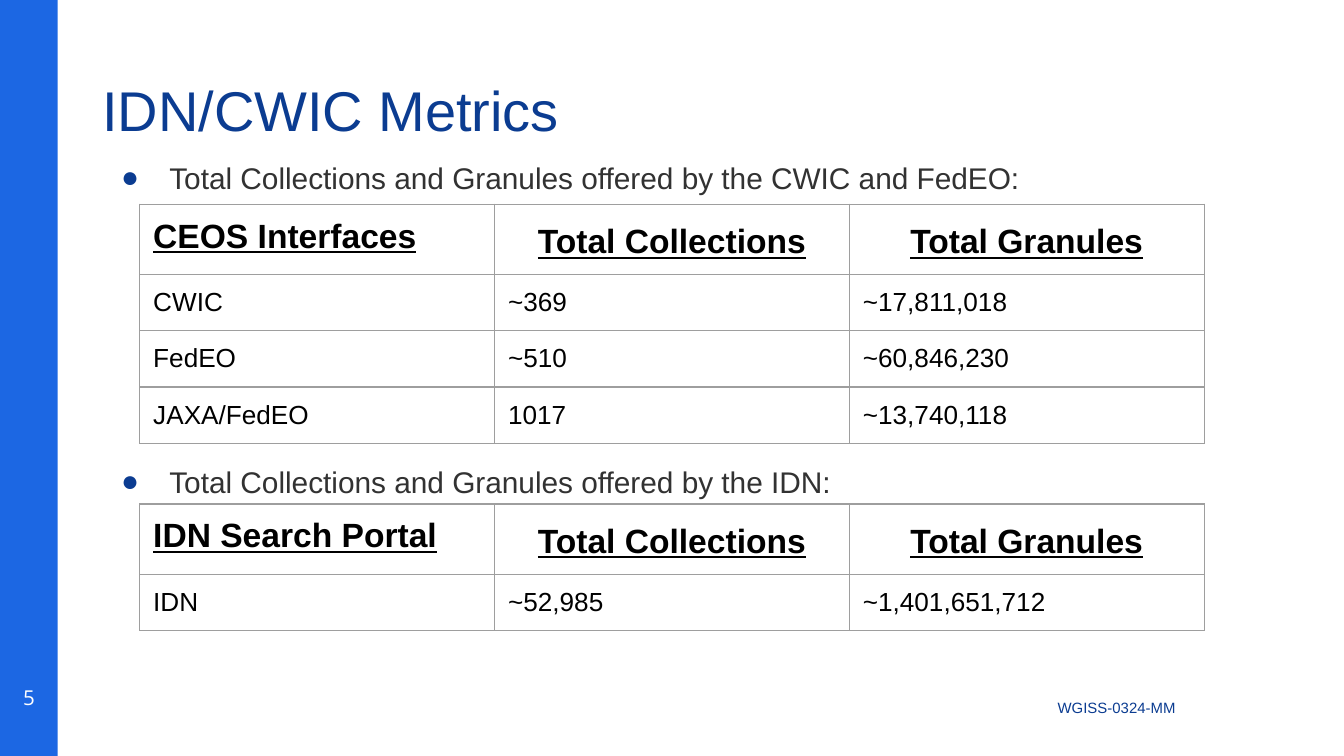
from dataclasses import dataclass

from lxml.etree import SubElement
from pptx import Presentation
from pptx.dml.color import RGBColor
from pptx.enum.shapes import MSO_SHAPE
from pptx.enum.text import MSO_ANCHOR, MSO_AUTO_SIZE, PP_ALIGN
from pptx.oxml import parse_xml
from pptx.oxml.ns import nsdecls, qn
from pptx.util import Inches, Pt

SLIDE_WIDTH = 10
SLIDE_HEIGHT = SLIDE_WIDTH * 9 / 16


@dataclass(frozen=True)
class Theme:
    band: str = "1C67E3"
    accent: str = "0B3C91"
    body: str = "323232"
    cell: str = "000000"
    border: str = "9E9E9E"
    on_band: str = "FFFFFF"
    font: str = "Arial"
    number_font: str = "Open Sans"
    title_size: int = 30
    header_size: int = 18
    body_size: int = 16
    cell_size: int = 14
    number_size: int = 11
    footer_size: int = 8


class SlideBuilder:
    def __init__(self, slide, theme):
        self.slide = slide
        self.theme = theme

    def style(self, paragraph, size, color, font=None, emphasis=False):
        paragraph.font.name = font or self.theme.font
        paragraph.font.size = Pt(size)
        paragraph.font.color.rgb = RGBColor.from_string(color)
        paragraph.font.bold = emphasis
        paragraph.font.underline = emphasis

    def band(self, left, top, width, height):
        band = self.slide.shapes.add_shape(
            MSO_SHAPE.RECTANGLE, Inches(left), Inches(top), Inches(width), Inches(height))
        band.shadow.inherit = False
        band.fill.solid()
        band.fill.fore_color.rgb = RGBColor.from_string(self.theme.band)
        band.line.fill.background()

    def text(self, words, box, size, color, font=None, inset=(0.07, 0.04),
             anchor=MSO_ANCHOR.TOP, align=PP_ALIGN.LEFT, spacing=1.0,
             bullet=False, fit=MSO_AUTO_SIZE.NONE):
        frame = self.slide.shapes.add_textbox(*map(Inches, box)).text_frame
        frame.word_wrap = True
        frame.auto_size = fit
        frame.vertical_anchor = anchor
        frame.margin_left = frame.margin_right = Inches(inset[0])
        frame.margin_top = frame.margin_bottom = Inches(inset[1])
        paragraph = frame.paragraphs[0]
        paragraph.text = words
        paragraph.alignment = align
        paragraph.line_spacing = spacing
        if bullet:
            self.add_bullet(paragraph)
        self.style(paragraph, size, color, font)

    def add_bullet(self, paragraph):
        properties = paragraph._p.get_or_add_pPr()
        properties.set("marL", str(Inches(0.5)))
        properties.set("indent", str(Inches(-0.36)))
        bullet_color = SubElement(properties, qn("a:buClr"))
        SubElement(bullet_color, qn("a:srgbClr"), val=self.theme.accent)
        SubElement(properties, qn("a:buFont"), typeface=self.theme.font)
        SubElement(properties, qn("a:buChar"), char="●")

    def bullet(self, words, top):
        self.text(words, (0.69, top, 8.62, 0.85), self.theme.body_size,
                  self.theme.body, spacing=1.1, bullet=True)

    def add_borders(self, cell):
        properties = cell._tc.get_or_add_tcPr()
        for position, side in enumerate(("lnL", "lnR", "lnT", "lnB")):
            properties.insert(position, parse_xml(
                f'<a:{side} {nsdecls("a")} w="{Pt(0.75)}"><a:solidFill>'
                f'<a:srgbClr val="{self.theme.border}"/></a:solidFill></a:{side}>'))

    def table(self, rows, top, column_width=2.64, row_height=5 / 12, frame_side=3.28):
        """Rows keep their own heights, whatever the size of the square frame."""
        frame = self.slide.shapes.add_table(
            len(rows), len(rows[0]), Inches(1.04), Inches(top),
            Inches(frame_side), Inches(frame_side))
        table = frame.table
        table.first_row = table.horz_banding = False
        for column in table.columns:
            column.width = Inches(column_width)
        for row in table.rows:
            row.height = Inches(row_height)
        frame.width = frame.height = Inches(frame_side)
        for r, row in enumerate(rows):
            for c, words in enumerate(row):
                self.fill_cell(table.cell(r, c), words, header=r == 0, centred=r == 0 and c > 0)

    def fill_cell(self, cell, words, header, centred):
        cell.fill.background()
        self.add_borders(cell)
        cell.margin_left = cell.margin_right = Inches(0.1)
        cell.margin_top = cell.margin_bottom = Inches(0.1)
        paragraph = cell.text_frame.paragraphs[0]
        paragraph.text = words
        if centred:
            paragraph.alignment = PP_ALIGN.CENTER
            paragraph.line_spacing = 1.15
        size = self.theme.header_size if header else self.theme.cell_size
        self.style(paragraph, size, self.theme.cell, emphasis=header)


def main():
    presentation = Presentation()
    presentation.slide_width = Inches(SLIDE_WIDTH)
    presentation.slide_height = Inches(SLIDE_HEIGHT)
    theme = Theme()
    metrics = SlideBuilder(
        presentation.slides.add_slide(presentation.slide_layouts[6]), theme)
    totals = ("Total Collections", "Total Granules")

    metrics.band(0, 0, 0.43, SLIDE_HEIGHT)
    metrics.text("IDN/CWIC Metrics", (0.69, 0.3, 6.95, 1.09), theme.title_size,
                 theme.accent, anchor=MSO_ANCHOR.MIDDLE, spacing=0.9)

    metrics.bullet("Total Collections and Granules offered by the CWIC and FedEO:", 1.12)
    metrics.table([
        ("CEOS Interfaces", *totals),
        ("CWIC", "~369", "~17,811,018"),
        ("FedEO", "~510", "~60,846,230"),
        ("JAXA/FedEO", "1017", "~13,740,118"),
    ], 1.52)

    metrics.bullet("Total Collections and Granules offered by the IDN:", 3.38)
    metrics.table([
        ("IDN Search Portal", *totals),
        ("IDN", "~52,985", "~1,401,651,712"),
    ], 3.75)

    metrics.text("WGISS-0324-MM", (7.77, 5.13, 1.32, 0.25), theme.footer_size,
                 theme.accent, inset=(0.1, 0.1), fit=MSO_AUTO_SIZE.SHAPE_TO_FIT_TEXT)
    metrics.text("5", (0.04, 5.04, 0.35, 0.3), theme.number_size, theme.on_band,
                 font=theme.number_font, anchor=MSO_ANCHOR.MIDDLE, align=PP_ALIGN.CENTER)

    presentation.save("out.pptx")


if __name__ == "__main__":
    main()
